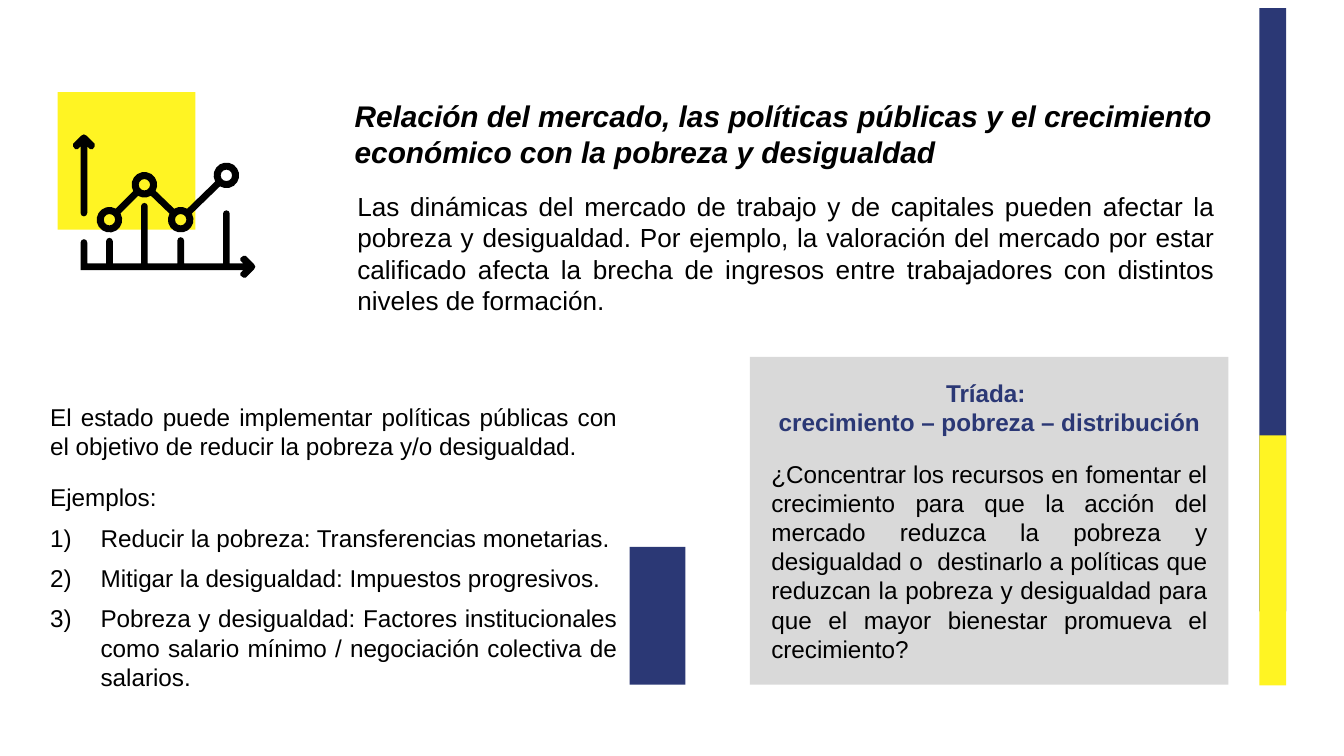
import math

import pptx
import pptx.dml.color
import pptx.enum.shapes
import pptx.enum.text
import pptx.oxml.ns
import pptx.util

PX_PER_INCH = 200
EMU_PER_PX = 914400 // PX_PER_INCH
COLORS = {
    "navy": "2B3875",
    "yellow": "FFF423",
    "grey": "D9D9D9",
    "white": "FFFFFF",
    "black": "000000",
}
FONT = "Arial"
HALF_STROKE = 5
RING_OUTER = 19
RING_HOLE = 8.5
LIST_INDENT = 75
ARROW_SIDE = [(18, 5), (22, 9), (22, 13), (18, 16), (14, 16), (2, 4)]
ALIGN = pptx.enum.text.PP_ALIGN


def px(length):
    return pptx.util.Emu(round(length * EMU_PER_PX))


def color(name):
    return pptx.dml.color.RGBColor.from_string(COLORS[name])


def paint(shape, fill):
    shape.shadow.inherit = False
    shape.fill.solid()
    shape.fill.fore_color.rgb = color(fill)
    shape.line.fill.background()


def add_block(page, left, top, width, height, fill):
    block = page.shapes.add_shape(
        pptx.enum.shapes.MSO_SHAPE.RECTANGLE,
        px(left), px(top), px(width), px(height),
    )
    paint(block, fill)
    return block


def add_text_box(page, left, top, width, height):
    return page.shapes.add_textbox(px(left), px(top), px(width), px(height))


def prepare_frame(box, inset):
    frame = box.text_frame
    frame.word_wrap = True
    frame.vertical_anchor = pptx.enum.text.MSO_ANCHOR.TOP
    frame.margin_left = frame.margin_right = px(inset)
    frame.margin_top = frame.margin_bottom = px(inset)


def number_paragraph(para):
    properties = para._p.get_or_add_pPr()
    properties.set("marL", str(px(LIST_INDENT)))
    properties.set("indent", str(-px(LIST_INDENT)))
    number = properties.makeelement(pptx.oxml.ns.qn("a:buAutoNum"), {"type": "arabicParenR"})
    properties.append(number)


def write_paragraph(box, text, size, align=ALIGN.JUSTIFY, after=12,
                    ink="black", bold=False, italic=False, numbered=False):
    frame = box.text_frame
    para = frame.add_paragraph() if frame.text else frame.paragraphs[0]
    para.text = text
    para.alignment = align
    para.space_after = pptx.util.Pt(after)
    if numbered:
        number_paragraph(para)
    for span in para.runs:
        span.font.name = FONT
        span.font.size = pptx.util.Pt(size)
        span.font.bold = bold
        span.font.italic = italic
        span.font.color.rgb = color(ink)


def arc(center, radius, start, sweep, steps):
    angles = [start + sweep * step / steps for step in range(steps + 1)]
    return [
        (center[0] + radius * math.cos(angle), center[1] + radius * math.sin(angle))
        for angle in angles
    ]


def arrow_outline(tip):
    near = [(-back, -side) for back, side in ARROW_SIDE]
    far = [(-back, side) for back, side in reversed(ARROW_SIDE)]
    return [(tip[0] + x, tip[1] + y) for x, y in near + [(0, 0)] + far]


def vertical_axis_outline(x, top, bottom):
    head = [(x - across, top - along) for along, across in arrow_outline((0, 0))]
    return head + arc((x, bottom), HALF_STROKE, math.pi, -math.pi, 4)


def base_axis_outline(tip, axis_x, ticks):
    x, y = tip
    outline = [(axis_x - HALF_STROKE, y + HALF_STROKE)]
    for index, (tick_x, tick_top) in enumerate(ticks):
        if index:
            outline.append((tick_x - HALF_STROKE, y - HALF_STROKE))
        outline += arc((tick_x, tick_top), HALF_STROKE, math.pi, math.pi, 4)
        outline.append((tick_x + HALF_STROKE, y - HALF_STROKE))
    return outline + arrow_outline(tip)


def trend_outline(centers):
    gap = math.asin(HALF_STROKE / RING_OUTER)
    tour = centers + centers[-2:0:-1]
    outline = []
    for index, (x, y) in enumerate(tour):
        before, after = tour[index - 1], tour[(index + 1) % len(tour)]
        start = math.atan2(before[1] - y, before[0] - x) + gap
        end = math.atan2(after[1] - y, after[0] - x) - gap
        sweep = (end - start) % math.tau
        outline += arc((x, y), RING_OUTER, start, sweep, math.ceil(sweep / 0.4))
    return outline


def add_outlines(page, outlines, fill):
    scaled = [[(px(x), px(y)) for x, y in outline] for outline in outlines]
    builder = page.shapes.build_freeform(*scaled[0][0])
    for index, (first, *rest) in enumerate(scaled):
        if index:
            builder.move_to(*first)
        builder.add_line_segments(rest, close=True)
    paint(builder.convert_to_shape(), fill)


def add_chart_icon(page):
    axis_x = 125
    centers = [(163, 327), (215, 275), (269, 327), (337, 261)]
    tick_tops = (359, 307, 358, 318)
    ticks = [(axis_x, 361)] + [(x, top) for (x, y), top in zip(centers, tick_tops)]
    holes = [arc(center, RING_HOLE, 0, -math.tau, 12) for center in centers]
    add_outlines(
        page,
        [
            vertical_axis_outline(axis_x, 200, 317),
            trend_outline(centers),
            *holes,
            base_axis_outline((380, 397), axis_x, ticks),
        ],
        "black",
    )


def add_heading(page):
    title = add_text_box(page, 508, 126, 1516, 154)
    prepare_frame(title, 20)
    write_paragraph(
        title,
        "Relación del mercado, las políticas públicas y el crecimiento "
        "económico con la pobreza y desigualdad",
        16, ALIGN.LEFT, bold=True, italic=True,
    )


def add_policies(page):
    policies = add_block(page, 55, 578, 882, 472, "white")
    prepare_frame(policies, 20)
    write_paragraph(
        policies,
        "El estado puede implementar políticas públicas con el objetivo de "
        "reducir la pobreza y/o desigualdad.",
        13,
    )
    write_paragraph(policies, "Ejemplos:", 13, after=6)
    for example in (
        "Reducir la pobreza: Transferencias monetarias.",
        "Mitigar la desigualdad: Impuestos progresivos.",
        "Pobreza y desigualdad: Factores institucionales como salario mínimo / "
        "negociación colectiva de salarios.",
    ):
        write_paragraph(policies, example, 13, after=6, numbered=True)


def add_intro(page):
    intro = add_text_box(page, 512, 263, 1316, 212)
    prepare_frame(intro, 20)
    write_paragraph(
        intro,
        "Las dinámicas del mercado de trabajo y de capitales pueden afectar la "
        "pobreza y desigualdad. Por ejemplo, la valoración del mercado por estar "
        "calificado afecta la brecha de ingresos entre trabajadores con distintos "
        "niveles de formación.",
        14,
    )


def add_triad(page):
    triad = add_block(page, 1116, 531, 712, 488, "grey")
    prepare_frame(triad, 32)
    for heading, after in (("Tríada: ", 0), ("crecimiento – pobreza – distribución", 12)):
        write_paragraph(triad, heading, 13, ALIGN.CENTER, after, "navy", bold=True)
    write_paragraph(
        triad,
        "¿Concentrar los recursos en fomentar el crecimiento para que la acción "
        "del mercado reduzca la pobreza y desigualdad o  destinarlo a políticas "
        "que reduzcan la pobreza y desigualdad para que el mayor bienestar "
        "promueva el crecimiento?",
        13,
    )


def main():
    deck = pptx.Presentation()
    deck.slide_width, deck.slide_height = px(2000), px(1125)
    page = deck.slides.add_slide(deck.slide_layouts[6])
    add_block(page, 1874, 12, 40, 898, "navy")
    add_block(page, 1874, 648, 40, 372, "yellow")
    add_block(page, 86, 137, 205, 205, "yellow")
    add_block(page, 815, 814, 205, 205, "navy")
    add_chart_icon(page)
    add_heading(page)
    add_policies(page)
    add_intro(page)
    add_triad(page)
    deck.save("out.pptx")


if __name__ == "__main__":
    main()
